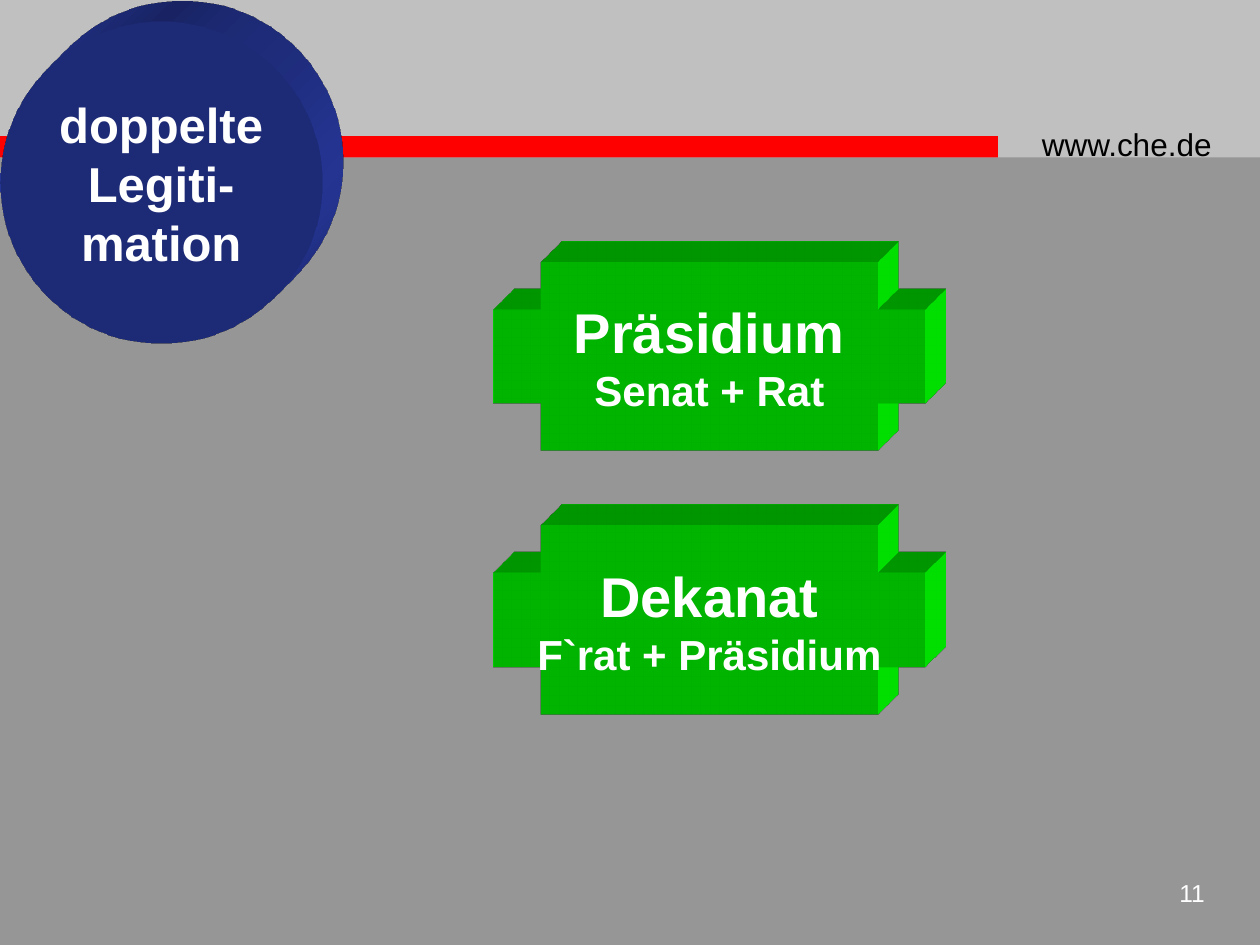
from lxml import etree
from pptx import Presentation
from pptx.dml.color import RGBColor
from pptx.enum.shapes import MSO_SHAPE
from pptx.enum.text import MSO_ANCHOR, PP_ALIGN
from pptx.util import Inches, Pt

RECTANGLE, ELLIPSE, PLUS = MSO_SHAPE.RECTANGLE, MSO_SHAPE.OVAL, MSO_SHAPE.CROSS
LEFT, CENTER, RIGHT = PP_ALIGN.LEFT, PP_ALIGN.CENTER, PP_ALIGN.RIGHT
MIDDLE = MSO_ANCHOR.MIDDLE

WIDTH, HEIGHT = 10, 7.5
FONT = "Arial"
COLORS = {
    "background": "969696",
    "header": "C0C0C0",
    "stripe": "FF0000",
    "topic": "293BA5",
    "body": "00FF00",
    "light": "FFFFFF",
    "dark": "000000",
}
DRAWING = "http://schemas.openxmlformats.org/drawingml/2006/main"

# Governing bodies: name and the bodies that legitimise it
BODIES = [("Präsidium", "Senat + Rat"), ("Dekanat", "F`rat + Präsidium")]
BODY_LEFT, BODY_TOP = 3.92, 2.08
BODY_WIDTH, BODY_HEIGHT = 3.42, 1.5
BODY_PITCH = 2.09


def color(name):
    return RGBColor.from_string(COLORS[name])


def write(frame, lines, tint, align, bold=False):
    """Fill a text frame with (text, size) lines."""
    for index, (text, size) in enumerate(lines):
        para = frame.paragraphs[0] if index == 0 else frame.add_paragraph()
        para.text = text
        para.alignment = align
        para.font.name = FONT
        para.font.size = Pt(size)
        para.font.bold = bold
        para.font.color.rgb = color(tint)


def add_figure(page, kind, area, fill):
    figure = page.shapes.add_shape(kind, *map(Inches, area))
    figure.shadow.inherit = False
    figure.fill.solid()
    figure.fill.fore_color.rgb = color(fill)
    figure.line.fill.background()
    return figure


def extrude(figure, fill):
    """Give a figure depth towards the upper right."""
    scene = f"""<a:scene3d xmlns:a="{DRAWING}">
        <a:camera prst="legacyObliqueTopRight"/>
        <a:lightRig rig="legacyFlat3" dir="b"/></a:scene3d>"""
    solid = f"""<a:sp3d xmlns:a="{DRAWING}" extrusionH="430200" prstMaterial="legacyMatte">
        <a:bevelT w="13500" h="13500" prst="angle"/>
        <a:bevelB w="13500" h="13500" prst="angle"/>
        <a:extrusionClr><a:srgbClr val="{COLORS[fill]}"/></a:extrusionClr></a:sp3d>"""
    for markup in (scene, solid):
        figure._element.spPr.append(etree.fromstring(markup))


def add_block(page, kind, area, fill, lines):
    """Add an extruded figure with centred bold text."""
    block = add_figure(page, kind, area, fill)
    extrude(block, fill)
    block.text_frame.word_wrap = False
    block.text_frame.vertical_anchor = MIDDLE
    write(block.text_frame, lines, "light", CENTER, bold=True)
    return block


def add_label(page, area, text, size, tint, align):
    box = page.shapes.add_textbox(*map(Inches, area))
    box.text_frame.word_wrap = True
    write(box.text_frame, [(text, size)], tint, align)


def main():
    deck = Presentation()
    deck.slide_width, deck.slide_height = Inches(WIDTH), Inches(HEIGHT)
    page = deck.slides.add_slide(deck.slide_layouts[6])
    page.background.fill.solid()
    page.background.fill.fore_color.rgb = color("background")

    # Header band, stripe, web address and page number
    add_figure(page, RECTANGLE, (0, 0, WIDTH, HEIGHT / 6), "header")
    add_figure(page, RECTANGLE, (-0.01, 1.08, 7.93, 0.17), "stripe")
    add_label(page, (8.17, 0.94, 1.75, 0.4), "www.che.de", 18, "dark", LEFT)
    add_label(page, (9.08, 6.92, 0.58, 0.42), "11", 14, "light", RIGHT)

    # Topic disc
    topic = [(line, 28) for line in ("doppelte", "Legiti-", "mation")]
    add_block(page, ELLIPSE, (0, 0.17, 2.56, 2.56), "topic", topic)

    # Governing bodies, one below the other
    for row, (name, sources) in enumerate(BODIES):
        area = (BODY_LEFT, BODY_TOP + row * BODY_PITCH, BODY_WIDTH, BODY_HEIGHT)
        body = add_block(page, PLUS, area, "body", [(name, 32), (sources, 24)])
        body.adjustments[0] = 0.25

    deck.save("out.pptx")


if __name__ == "__main__":
    main()
